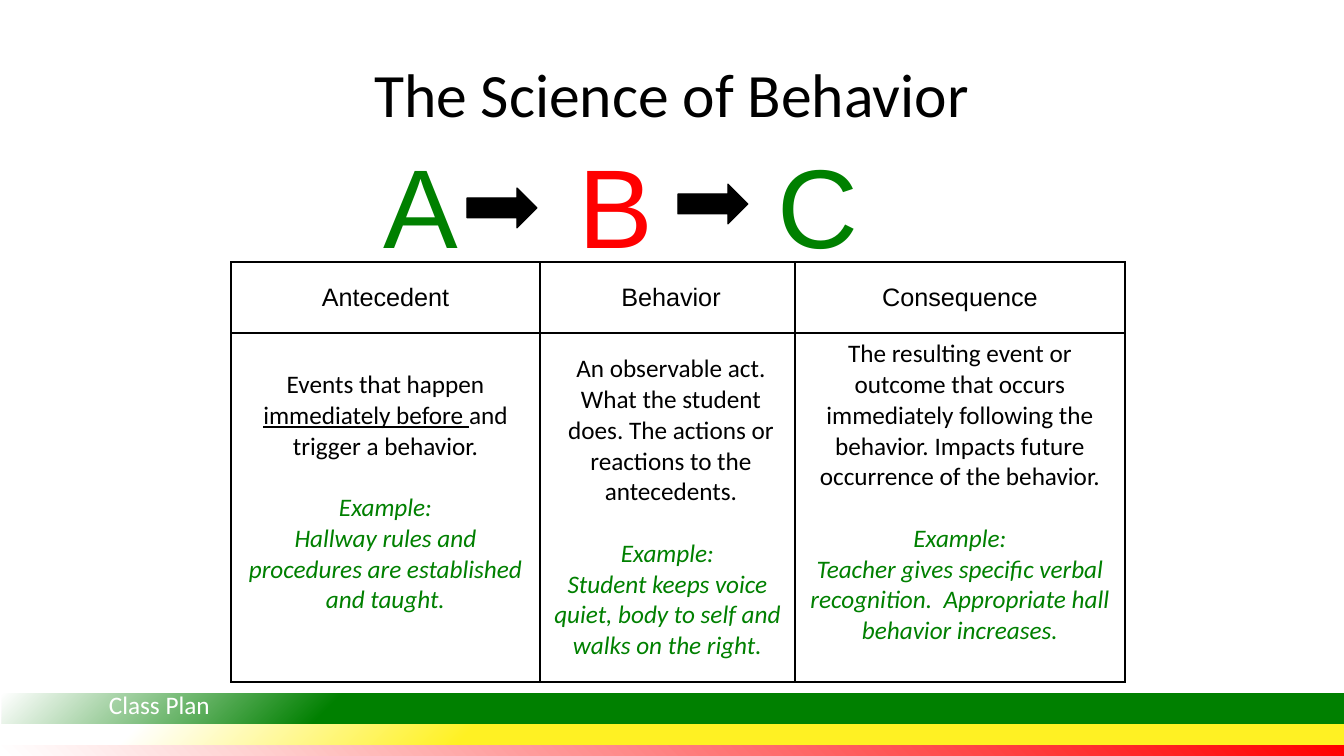
from dataclasses import dataclass

from pptx import Presentation
from pptx.dml.color import RGBColor
from pptx.enum.shapes import MSO_SHAPE as Shape
from pptx.enum.text import MSO_ANCHOR as Anchor, PP_ALIGN as Align
from pptx.oxml import parse_xml
from pptx.oxml.ns import nsdecls, qn
from pptx.util import Emu, Pt

EMU_PER_PX = 914400 / 100.8

BLACK = RGBColor(0x00, 0x00, 0x00)
WHITE = RGBColor(0xFF, 0xFF, 0xFF)
GREEN = RGBColor(0x00, 0x80, 0x00)
RED = RGBColor(0xFF, 0x00, 0x00)
YELLOW = RGBColor(0xFF, 0xF1, 0x23)

BODY_FONT = "Calibri"
HEADING_FONT = "Arial"
CELL_SIZE = 18
LINE_GAP = 22  # points, one line of cell text
BORDER_WIDTH = 12700


@dataclass
class Box:
    left: int
    top: int
    width: int
    height: int

    def emu(self) -> tuple:
        return tuple(px(n) for n in (self.left, self.top, self.width, self.height))


@dataclass
class Bar:
    top: int
    height: int
    stops: list
    focus: str


@dataclass
class Label:
    text: str
    box: Box
    size: int
    font: str
    color: RGBColor
    align: Align = Align.CENTER
    anchor: Anchor = Anchor.TOP


@dataclass
class Column:
    heading: str
    width: int
    definition: list  # pieces of one paragraph; the second is underlined
    example: str
    indent: int = 0
    bottom_margin: int = 35


BARS = [
    Bar(745, 11, [(0, RED), (100, WHITE)], 'l="100000" b="100000"'),
    Bar(693, 31, [(0, GREEN), (75, GREEN), (100, WHITE)], 'l="100000" t="100000"'),
    Bar(724, 21, [(0, YELLOW), (65, YELLOW), (90, WHITE), (100, WHITE)],
        'l="100000" t="100000"'),
]

LETTERS = [("A", 421, GREEN), ("B", 616, RED), ("C", 818, GREEN)]

LABELS = [
    Label("Class Plan", Box(99, 684, 257, 40), 18, BODY_FONT, WHITE, Align.LEFT),
    Label("The Science of Behavior", Box(67, 30, 1210, 126), 44, BODY_FONT, BLACK,
          anchor=Anchor.MIDDLE),
] + [
    Label(letter, Box(center - 60, 132, 120, 122), 80, HEADING_FONT, color)
    for letter, center, color in LETTERS
]

ARROWS = [Box(678, 184, 70, 40), Box(467, 188, 70, 40)]

TABLE_LEFT, TABLE_TOP = 231, 262
ROW_HEIGHTS = [71, 349]
COLUMNS = [
    Column("Antecedent", 309,
           ["Events that happen ", "immediately before ", "and trigger a behavior."],
           "Hallway rules and procedures are established and taught."),
    Column("Behavior", 255,
           ["An observable act. What the student does. "
            "The actions or reactions to the antecedents."],
           "Student keeps voice quiet, body to self and walks on the right.",
           indent=7, bottom_margin=5),
    Column("Consequence", 330,
           ["The resulting event or outcome that occurs immediately following "
            "the behavior. Impacts future occurrence of the behavior."],
           "Teacher gives specific verbal recognition.  "
           "Appropriate hall behavior increases."),
]


def px(length: int) -> Emu:
    return Emu(round(length * EMU_PER_PX))


def format_runs(paragraph, size: int, font: str, color: RGBColor,
                italic: bool = False) -> None:
    for run in paragraph.runs:
        run.font.size = Pt(size)
        run.font.name = font
        run.font.color.rgb = color
        run.font.italic = italic


def add_bar(slide, bar: Bar) -> None:
    shape = slide.shapes.add_shape(Shape.RECTANGLE, *Box(2, bar.top, 1342, bar.height).emu())
    shape.shadow.inherit = False
    shape.line.fill.background()
    shape.fill.background()
    stops = "".join(
        f'<a:gs pos="{position * 1000}"><a:srgbClr val="{color}"/></a:gs>'
        for position, color in bar.stops)
    gradient = parse_xml(
        f'<a:gradFill {nsdecls("a")} rotWithShape="1"><a:gsLst>{stops}</a:gsLst>'
        f'<a:path path="circle"><a:fillToRect {bar.focus}/></a:path></a:gradFill>')
    properties = shape._element.spPr
    properties.replace(properties.find(qn("a:noFill")), gradient)


def add_label(slide, label: Label) -> None:
    text_frame = slide.shapes.add_textbox(*label.box.emu()).text_frame
    text_frame.word_wrap = True
    text_frame.vertical_anchor = label.anchor
    text_frame.text = label.text
    paragraph = text_frame.paragraphs[0]
    paragraph.alignment = label.align
    format_runs(paragraph, label.size, label.font, label.color)


def add_arrow(slide, box: Box) -> None:
    arrow = slide.shapes.add_shape(Shape.RIGHT_ARROW, *box.emu())
    arrow.shadow.inherit = False
    arrow.fill.solid()
    arrow.fill.fore_color.rgb = BLACK
    arrow.line.color.rgb = BLACK
    arrow.line.width = Pt(0.75)


def prepare_cell(cell) -> None:
    cell.fill.background()
    cell.vertical_anchor = Anchor.MIDDLE
    properties = cell._tc.get_or_add_tcPr()
    for index, side in enumerate("LRTB"):
        properties.insert(index, parse_xml(
            f'<a:ln{side} {nsdecls("a")} w="{BORDER_WIDTH}"><a:solidFill>'
            f'<a:srgbClr val="{BLACK}"/></a:solidFill></a:ln{side}>'))


def indent_paragraph(paragraph, indent: int) -> None:
    paragraph._p.get_or_add_pPr().set("marL", str(px(indent)))


def fill_heading(cell, column: Column) -> None:
    cell.text_frame.text = column.heading
    paragraph = cell.text_frame.paragraphs[0]
    paragraph.alignment = Align.CENTER
    indent_paragraph(paragraph, column.indent)
    format_runs(paragraph, CELL_SIZE, HEADING_FONT, BLACK)


def fill_details(cell, column: Column) -> None:
    cell.margin_bottom = px(column.bottom_margin)
    text_frame = cell.text_frame
    definition = text_frame.paragraphs[0]
    for index, piece in enumerate(column.definition):
        run = definition.add_run()
        run.text = piece
        run.font.underline = index == 1
    indent_paragraph(definition, column.indent)
    format_runs(definition, CELL_SIZE, BODY_FONT, BLACK)

    for text, gap in (("Example:", LINE_GAP), (column.example, 0)):
        paragraph = text_frame.add_paragraph()
        paragraph.text = text
        paragraph.space_before = Pt(gap)
        format_runs(paragraph, CELL_SIZE, BODY_FONT, GREEN, italic=True)
    for paragraph in text_frame.paragraphs:
        paragraph.alignment = Align.CENTER


def add_behavior_table(slide) -> None:
    box = Box(TABLE_LEFT, TABLE_TOP, sum(c.width for c in COLUMNS), sum(ROW_HEIGHTS))
    table = slide.shapes.add_table(len(ROW_HEIGHTS), len(COLUMNS), *box.emu()).table
    table.first_row = False
    table.horz_banding = False
    for row, height in zip(table.rows, ROW_HEIGHTS):
        row.height = px(height)
    for index, column in enumerate(COLUMNS):
        table.columns[index].width = px(column.width)
        for row, fill_cell in enumerate((fill_heading, fill_details)):
            cell = table.cell(row, index)
            prepare_cell(cell)
            fill_cell(cell, column)


def main() -> None:
    presentation = Presentation()
    presentation.slide_width = px(1344)
    presentation.slide_height = px(756)
    slide = presentation.slides.add_slide(presentation.slide_layouts[6])

    # Footer bars
    for bar in BARS:
        add_bar(slide, bar)
    # Footer name, title and the letters A, B, C
    for label in LABELS:
        add_label(slide, label)
    # Definitions and examples
    add_behavior_table(slide)
    # Arrows between the letters
    for box in ARROWS:
        add_arrow(slide, box)

    presentation.save("out.pptx")


if __name__ == "__main__":
    main()
